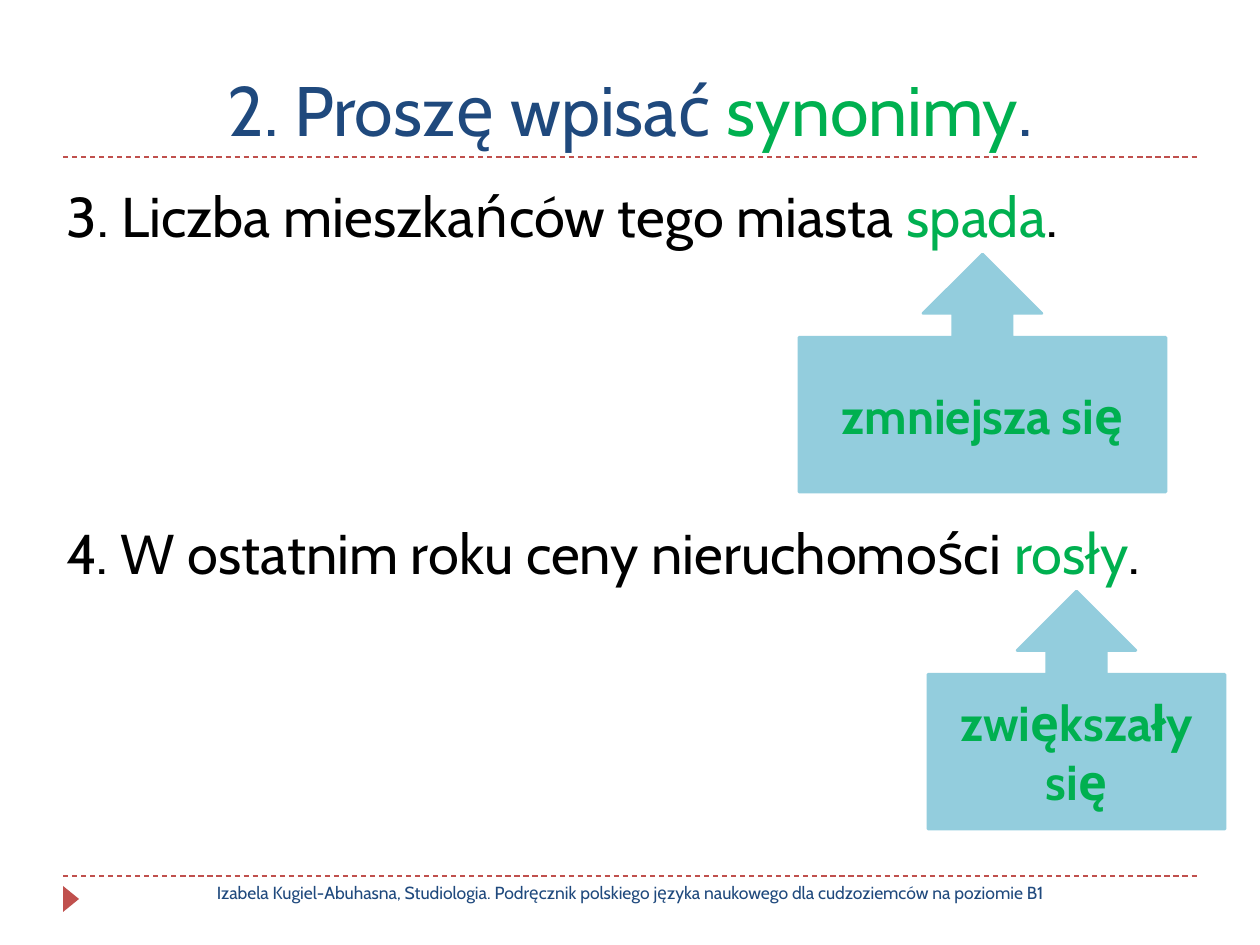
from dataclasses import dataclass

from lxml.etree import SubElement
from pptx import Presentation
from pptx.dml.color import RGBColor
from pptx.enum.dml import MSO_LINE
from pptx.enum.shapes import MSO_CONNECTOR, MSO_SHAPE
from pptx.enum.text import MSO_ANCHOR, MSO_AUTO_SIZE, PP_ALIGN
from pptx.oxml.ns import qn
from pptx.util import Emu, Pt

PX_PER_INCH = 126


@dataclass(frozen=True)
class Theme:
    font: str = "Cabin"
    navy: RGBColor = RGBColor(0x1F, 0x49, 0x7D)
    green: RGBColor = RGBColor(0x00, 0xB0, 0x50)
    black: RGBColor = RGBColor(0x00, 0x00, 0x00)
    red: RGBColor = RGBColor(0xC0, 0x50, 0x4D)
    aqua: RGBColor = RGBColor(0x93, 0xCD, 0xDD)
    title_size: int = 40
    sentence_size: int = 32
    answer_size: int = 28
    footer_size: int = 10


THEME = Theme()


def px(n):
    return Emu(round(n * 914400 / PX_PER_INCH))


def box(*lengths):
    return [px(n) for n in lengths]


def write(p, parts, size, bold=False):
    """Fill a paragraph with (text, colour) parts."""
    for text, color in parts:
        r = p.add_run()
        r.text = text
        r.font.name = THEME.font
        r.font.size = Pt(size)
        r.font.bold = bold
        r.font.color.rgb = color


def with_keyword(before, keyword, color):
    return [(before, color), (keyword, THEME.green), (".", color)]


def add_rule(slide, y):
    s = slide.shapes.add_connector(MSO_CONNECTOR.STRAIGHT, *box(63, y, 1197, y))
    s.line.color.rgb = THEME.red
    s.line.width = Pt(0.75)
    s.line.dash_style = MSO_LINE.DASH
    SubElement(s._element.spPr, qn("a:effectLst"))


def add_marker(slide):
    s = slide.shapes.add_shape(MSO_SHAPE.ISOSCELES_TRIANGLE, *box(58, 891, 26, 16))
    s.rotation = 90
    s.shadow.inherit = False
    s.fill.solid()
    s.fill.fore_color.rgb = THEME.red
    s.line.fill.background()


def set_title(slide, parts):
    sp = slide.shapes.title
    sp.left, sp.top, sp.width, sp.height = box(63, 21, 1134, 136)
    tf = sp.text_frame
    tf.auto_size = MSO_AUTO_SIZE.NONE
    tf.vertical_anchor = MSO_ANCHOR.BOTTOM
    p = tf.paragraphs[0]
    p.alignment = PP_ALIGN.CENTER
    write(p, parts, THEME.title_size)


def add_text(slide, bounds, parts, size, align=PP_ALIGN.LEFT, space_before=0):
    tf = slide.shapes.add_textbox(*box(*bounds)).text_frame
    tf.word_wrap = True
    p = tf.paragraphs[0]
    p.alignment = align
    p.space_before = Pt(space_before)
    write(p, parts, size)


def add_answer(slide, left, top, width, text):
    s = slide.shapes.add_shape(MSO_SHAPE.UP_ARROW_CALLOUT, *box(left, top, width, 238))
    s.shadow.inherit = False
    s.fill.solid()
    s.fill.fore_color.rgb = THEME.aqua
    s.line.color.rgb = THEME.aqua
    s.line.width = Pt(1.5)
    tf = s.text_frame
    tf.word_wrap = True
    tf.vertical_anchor = MSO_ANCHOR.MIDDLE
    p = tf.paragraphs[0]
    p.alignment = PP_ALIGN.CENTER
    write(p, [(text, THEME.green)], THEME.answer_size, bold=True)


def add_exercise(slide, top, sentence, keyword, answer, left, width):
    """Sentence with a green keyword, and the callout pointing up at it."""
    add_text(slide, (54, top, 1153, 364), with_keyword(sentence, keyword, THEME.black),
             THEME.sentence_size, space_before=6)
    add_answer(slide, left, top + 79, width, answer)


def main():
    prs = Presentation()
    prs.slide_width, prs.slide_height = box(1260, 945)
    slide = prs.slides.add_slide(prs.slide_layouts[5])

    for y in (876, 157):
        add_rule(slide, y)
    add_marker(slide)
    set_title(slide, with_keyword("2. Proszę wpisać ", "synonimy", THEME.navy))
    footer = ("Izabela Kugiel-Abuhasna, Studiologia. Podręcznik polskiego języka "
              "naukowego dla cudzoziemców na poziomie B1")
    add_text(slide, (109, 876, 1042, 50), [(footer, THEME.navy)],
             THEME.footer_size, PP_ALIGN.CENTER)
    add_exercise(slide, 175, "3. Liczba mieszkańców tego miasta ", "spada",
                 "zmniejsza się", left=799, width=367)
    add_exercise(slide, 512, "4. W ostatnim roku ceny nieruchomości ", "rosły",
                 "zwiększały się", left=928, width=297)

    prs.save("out.pptx")


if __name__ == "__main__":
    main()
